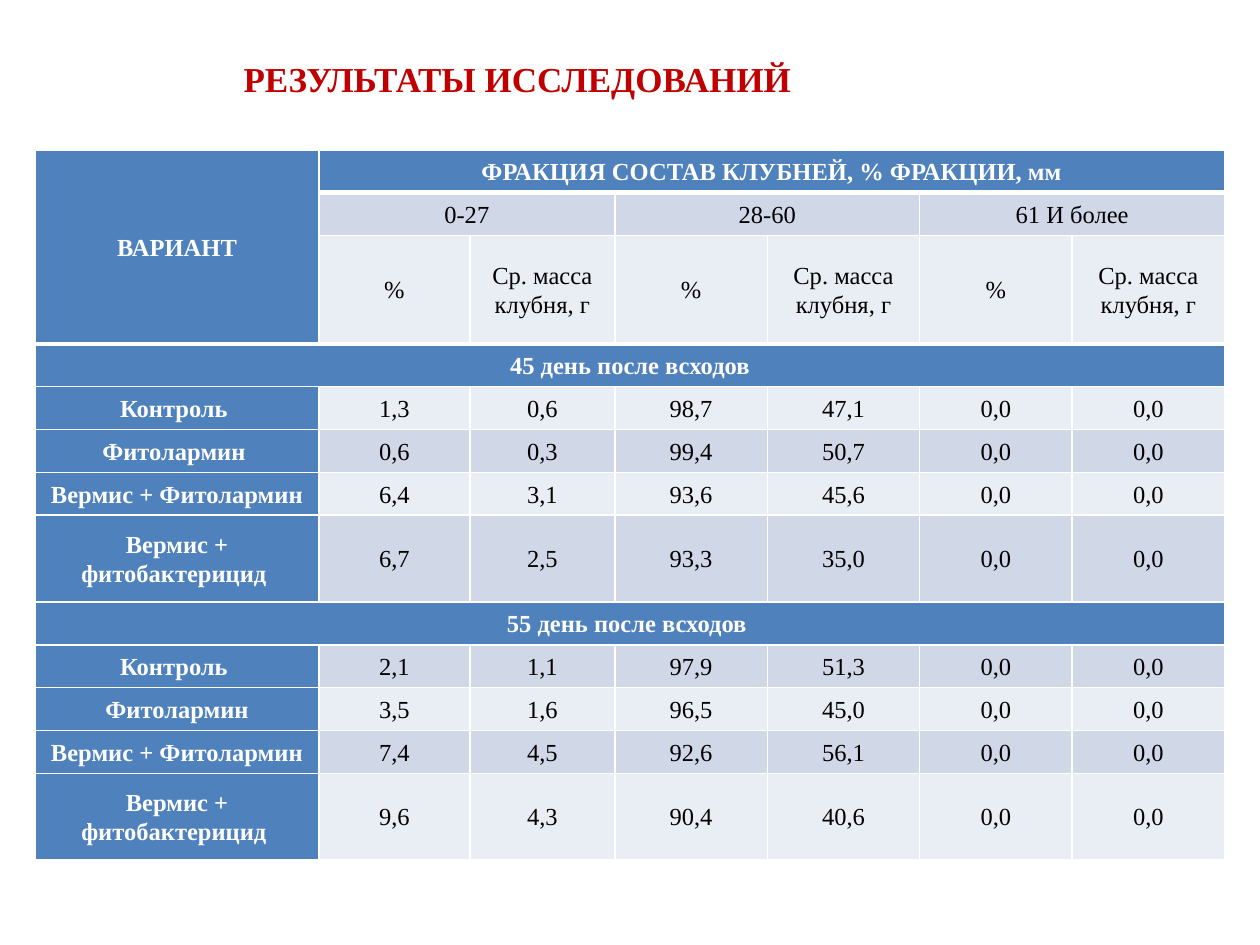
from lxml.etree import SubElement
from pptx import Presentation
from pptx.dml.color import RGBColor
from pptx.enum.text import MSO_ANCHOR, PP_ALIGN
from pptx.oxml.ns import qn
from pptx.util import Inches, Pt

WHITE = RGBColor(0xFF, 0xFF, 0xFF)
BLACK = RGBColor(0x00, 0x00, 0x00)
RED = RGBColor(0xC0, 0x00, 0x00)
BLUE = RGBColor(0x4F, 0x81, 0xBD)
DARK_BAND = RGBColor(0xD0, 0xD8, 0xE8)
LIGHT_BAND = RGBColor(0xE9, 0xED, 0xF4)

COLUMNS = [2.25, 1.2, 1.15] + [1.21] * 4
SECTION_ROWS = [0.34] * 4 + [0.69]
ROWS = [0.34, 0.34, 0.86] + SECTION_ROWS * 2
SECTIONS = (3, 8)
VALUE_ROWS = [
    ["Контроль ", "1,3", "0,6", "98,7", "47,1", "0,0", "0,0"],
    ["Фитолармин ", "0,6", "0,3", "99,4", "50,7", "0,0", "0,0"],
    ["Вермис + Фитолармин", "6,4", "3,1", "93,6", "45,6", "0,0", "0,0"],
    ["Вермис + фитобактерицид ", "6,7", "2,5", "93,3", "35,0", "0,0", "0,0"],
    ["Контроль ", "2,1", "1,1", "97,9", "51,3", "0,0", "0,0"],
    ["Фитолармин", "3,5", "1,6", "96,5", "45,0", "0,0", "0,0"],
    ["Вермис + Фитолармин", "7,4", "4,5", "92,6", "56,1", "0,0", "0,0"],
    ["Вермис + фитобактерицид ", "9,6", "4,3", "90,4", "40,6", "0,0", "0,0"],
]
DATA = [
    ["ВАРИАНТ", "ФРАКЦИЯ СОСТАВ КЛУБНЕЙ, % ФРАКЦИИ, мм"] + [""] * 5,
    ["", "0-27", "", "28-60", "", "61 И более", ""],
    [""] + ["%", "Ср. масса клубня, г"] * 3,
    ["45 день после всходов"] + [""] * 6,
    *VALUE_ROWS[:4],
    ["55 день после всходов "] + [""] * 6,
    *VALUE_ROWS[4:],
]
MERGES = [(0, 0, 2, 0), (0, 1, 0, 6)]
MERGES += [(1, col, 1, col + 1) for col in (1, 3, 5)]
MERGES += [(row, 0, row, 6) for row in SECTIONS]


class SlideBuilder:
    font_name = "Times New Roman"

    def __init__(self, slide):
        self.slide = slide

    def format_text(self, p, size, color, bold):
        p.alignment = PP_ALIGN.CENTER
        for r in p.runs:
            r.font.name = self.font_name
            r.font.size = Pt(size)
            r.font.bold = bold
            r.font.color.rgb = color

    def title(self, text, left, top, width, height):
        box = self.slide.shapes.add_textbox(
            Inches(left), Inches(top), Inches(width), Inches(height))
        tf = box.text_frame
        tf.word_wrap = True
        tf.vertical_anchor = MSO_ANCHOR.MIDDLE
        tf.text = text
        self.format_text(tf.paragraphs[0], 20, RED, True)

    def borders(self, cell, row):
        tcPr = cell._tc.get_or_add_tcPr()
        widths = {
            "a:lnL": 1,
            "a:lnR": 1,
            "a:lnT": 3 if row in (1, 3) else 1,
            "a:lnB": 3 if row in (0, 2) else 1,
        }
        for position, (tag, width) in enumerate(widths.items()):
            line = SubElement(tcPr, qn(tag), w=str(Pt(width)))
            fill = SubElement(line, qn("a:solidFill"))
            SubElement(fill, qn("a:srgbClr"), val=str(WHITE))
            tcPr.insert(position, line)

    def cell(self, cell, text, row, col):
        header = row == 0 or col == 0 or row in SECTIONS
        band = DARK_BAND if row % 2 else LIGHT_BAND
        cell.fill.solid()
        cell.fill.fore_color.rgb = BLUE if header else band
        cell.vertical_anchor = MSO_ANCHOR.MIDDLE
        cell.margin_left = cell.margin_right = Inches(0.01)
        cell.margin_top = cell.margin_bottom = 0
        self.borders(cell, row)
        if text:
            cell.text_frame.text = text
            p = cell.text_frame.paragraphs[0]
            p.line_spacing = 1.07
            if row > SECTIONS[0] and not header:
                p.space_after = Pt(8)
            self.format_text(p, 14, WHITE if header else BLACK, header)

    def table(self, data, left, top):
        table = self.slide.shapes.add_table(
            len(ROWS), len(COLUMNS), Inches(left), Inches(top),
            Inches(sum(COLUMNS)), Inches(sum(ROWS))).table
        table.first_row = False
        table.horz_banding = False
        for column, width in zip(table.columns, COLUMNS):
            column.width = Inches(width)
        for table_row, height in zip(table.rows, ROWS):
            table_row.height = Inches(height)
        for row, texts in enumerate(data):
            for col, text in enumerate(texts):
                self.cell(table.cell(row, col), text, row, col)
        for top_row, first_col, bottom_row, last_col in MERGES:
            table.cell(top_row, first_col).merge(table.cell(bottom_row, last_col))


def main():
    prs = Presentation()
    prs.slide_width = Inches(10)
    prs.slide_height = Inches(7.5)
    s = SlideBuilder(prs.slides.add_slide(prs.slide_layouts[6]))
    s.title("РЕЗУЛЬТАТЫ ИССЛЕДОВАНИЙ ", 0.27, 0.21, 7.74, 0.82)
    s.table(DATA, 0.28, 1.19)
    prs.save("out.pptx")


if __name__ == "__main__":
    main()
